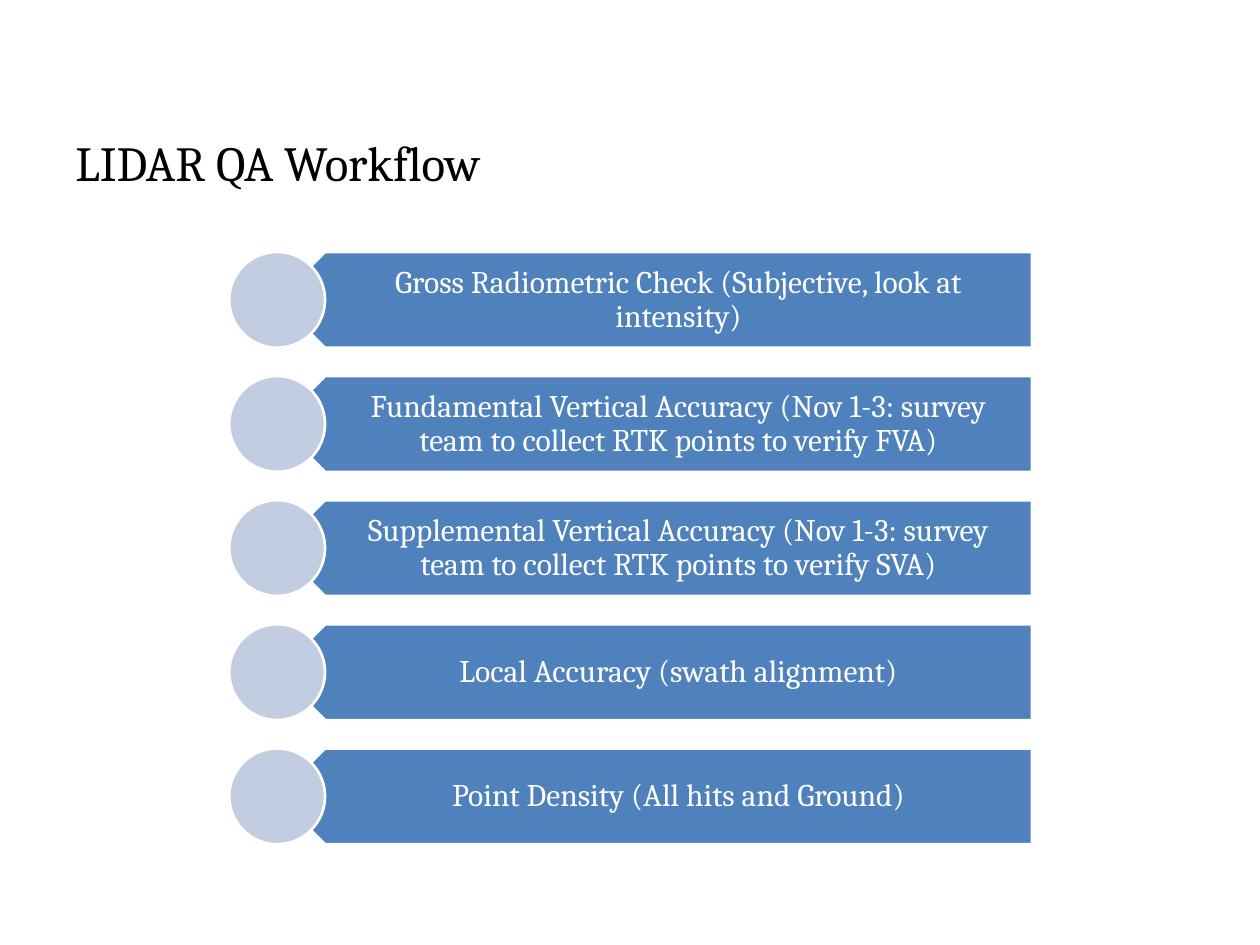
from dataclasses import dataclass

from pptx import Presentation
from pptx.dml.color import RGBColor
from pptx.enum.shapes import MSO_SHAPE
from pptx.enum.text import MSO_ANCHOR, PP_ALIGN
from pptx.shapes.autoshape import Shape
from pptx.slide import Slide
from pptx.util import Inches, Pt

FONT = "Cambria"
BLACK, WHITE = "000000", "FFFFFF"
BANNER_BLUE, CIRCLE_BLUE = "4F81BD", "C2CDE1"

FIRST_TOP = 2.0
STEP_PITCH = 0.985
STEP_HEIGHT = 0.76
CIRCLE_LEFT = 1.82
BANNER_LEFT = CIRCLE_LEFT + STEP_HEIGHT / 2
BANNER_WIDTH = 5.99
LABEL_INDENT = STEP_HEIGHT / 4


@dataclass
class Step:
    label: str
    top: float


def color(hex_value: str) -> RGBColor:
    return RGBColor.from_string(hex_value)


def add_outlined(slide: Slide, kind: MSO_SHAPE, left: float, top: float,
                 width: float, fill: str) -> Shape:
    shape = slide.shapes.add_shape(
        kind, Inches(left), Inches(top), Inches(width), Inches(STEP_HEIGHT))
    shape.shadow.inherit = False
    shape.fill.solid()
    shape.fill.fore_color.rgb = color(fill)
    shape.line.color.rgb = color(WHITE)
    shape.line.width = Pt(1.5)
    return shape


def add_text(slide: Slide, text: str, left: float, top: float, width: float,
             height: float, size: int, hex_value: str) -> Shape:
    box = slide.shapes.add_textbox(
        Inches(left), Inches(top), Inches(width), Inches(height))
    frame = box.text_frame
    frame.word_wrap = True
    frame.text = text
    font = frame.paragraphs[0].runs[0].font
    font.name = FONT
    font.size = Pt(size)
    font.color.rgb = color(hex_value)
    return box


def add_step(slide: Slide, step: Step) -> None:
    # Banner pointing left
    banner = add_outlined(slide, MSO_SHAPE.PENTAGON, BANNER_LEFT, step.top,
                          BANNER_WIDTH, BANNER_BLUE)
    banner.rotation = 180

    # Upright label over the banner
    label = add_text(slide, step.label, BANNER_LEFT + LABEL_INDENT, step.top,
                     BANNER_WIDTH - LABEL_INDENT, STEP_HEIGHT, 18, WHITE)
    frame = label.text_frame
    frame.vertical_anchor = MSO_ANCHOR.MIDDLE
    frame.margin_left, frame.margin_right = Inches(0.33), Inches(0.14)
    frame.margin_top = frame.margin_bottom = Inches(0.07)
    frame.paragraphs[0].alignment = PP_ALIGN.CENTER
    frame.paragraphs[0].line_spacing = 0.9

    # Circle over the banner's tip
    add_outlined(slide, MSO_SHAPE.OVAL, CIRCLE_LEFT, step.top, STEP_HEIGHT,
                 CIRCLE_BLUE)


def main() -> None:
    deck = Presentation()
    deck.slide_width, deck.slide_height = Inches(10), Inches(7.5)
    slide = deck.slides.add_slide(deck.slide_layouts[6])

    # Title
    add_text(slide, "LIDAR QA Workflow", 0.5, 1, 9, 1, 28, BLACK)

    # Workflow steps
    labels = [
        "Gross Radiometric Check (Subjective, look at intensity)",
        "Fundamental Vertical Accuracy (Nov 1-3: survey team to collect RTK points to verify FVA)",
        "Supplemental Vertical Accuracy (Nov 1-3: survey team to collect RTK points to verify SVA)",
        "Local Accuracy (swath alignment)",
        "Point Density (All hits and Ground)",
    ]
    for index, label in enumerate(labels):
        add_step(slide, Step(label, FIRST_TOP + index * STEP_PITCH))

    deck.save("out.pptx")


if __name__ == "__main__":
    main()
